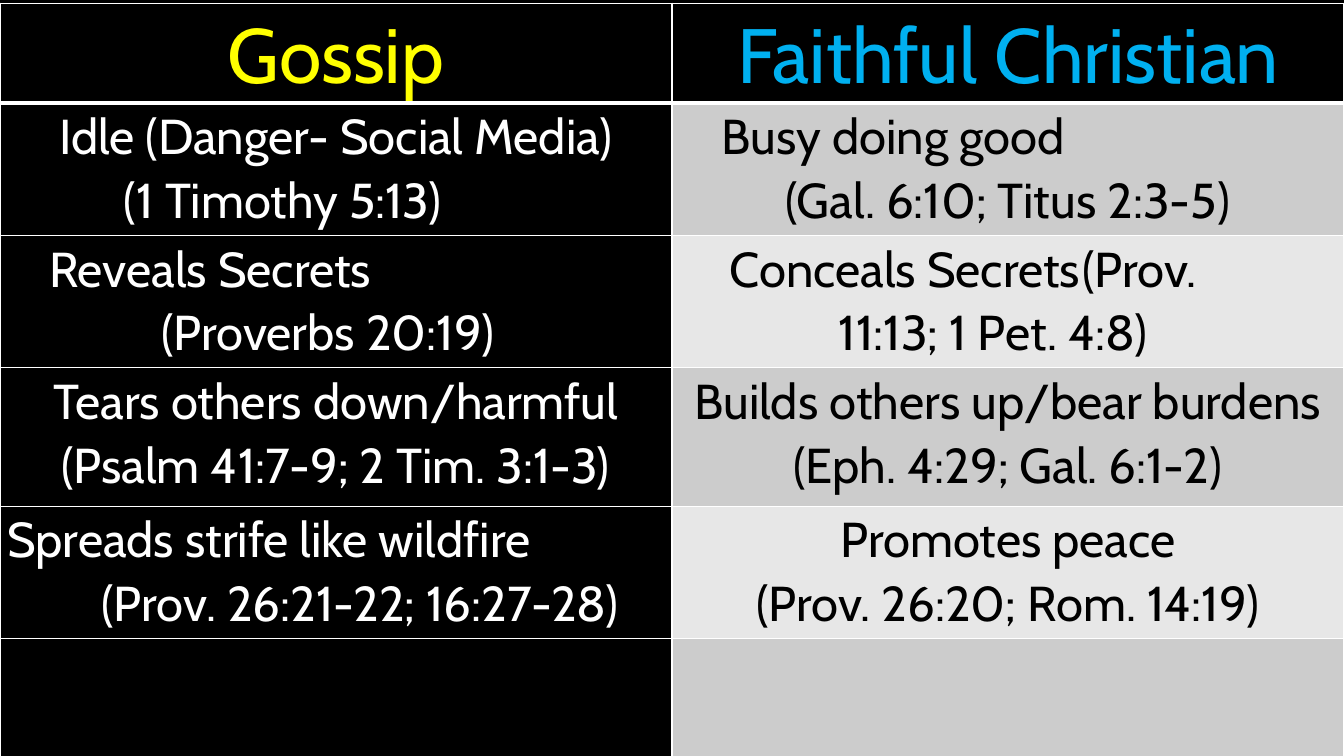
import dataclasses
import typing

import lxml.etree
import pptx
import pptx.dml.color
import pptx.enum.text
import pptx.oxml.ns
import pptx.util

EMU_PER_PX = 9525
SLIDE_WIDTH, SLIDE_HEIGHT = 1280, 720
TABLE_TOP = 3
ROW_HEIGHTS = (92, 126, 126, 132, 126, 135)
CELL_INSET = 7


@dataclasses.dataclass(frozen=True)
class Theme:
    font: str = "Cabin"
    heading_size: int = 55
    body_size: int = 35
    line_spacing: float = 1.07
    black: str = "000000"
    white: str = "FFFFFF"
    gossip: str = "FFFF00"
    faithful: str = "00B0F0"
    bands: tuple[str, str] = ("CCCCCC", "E7E7E7")
    rule: int = 1
    heading_rule: int = 3


class Line(typing.NamedTuple):
    text: str
    indent: int | None = None
    tabs: tuple[int, ...] = ()


class Entry(typing.NamedTuple):
    lines: tuple[Line, ...]
    color: str
    fill: str
    size: int
    bottom_rule: int


THEME = Theme()
HEADINGS = (("Gossip", THEME.gossip), ("Faithful Christian", THEME.faithful))
CONTRASTS = (
    (
        (Line("Idle (Danger- Social Media)"), Line("(1 Timothy 5:13)", 111)),
        (Line("Busy doing good", 40), Line("(Gal. 6:10; Titus 2:3-5)")),
    ),
    (
        (Line("Reveals Secrets", 40), Line("(Proverbs 20:19)", 147)),
        (
            Line("\tConceals Secrets\t(Prov.", 0, (26, 486)),
            Line("11:13; 1 Pet. 4:8)", 152),
        ),
    ),
    (
        (Line("Tears others down/harmful"), Line("(Psalm 41:7-9; 2 Tim. 3:1-3)")),
        (Line("Builds others up/bear burdens"), Line("(Eph. 4:29; Gal. 6:1-2)")),
    ),
    (
        (
            Line("Spreads strife like wildfire", 0),
            Line("(Prov. 26:21-22; 16:27-28)", 90),
        ),
        (Line("Promotes peace"), Line("(Prov. 26:20; Rom. 14:19)")),
    ),
    ((), ()),
)


def px(length: int) -> pptx.util.Emu:
    return pptx.util.Emu(length * EMU_PER_PX)


def rgb(color: str) -> pptx.dml.color.RGBColor:
    return pptx.dml.color.RGBColor.from_string(color)


def add_child(parent, tag: str, **attributes: str):
    return lxml.etree.SubElement(parent, pptx.oxml.ns.qn(tag), attributes)


def write_line(paragraph, line: Line, entry: Entry) -> None:
    paragraph.text = line.text
    paragraph.line_spacing = THEME.line_spacing
    paragraph.alignment = pptx.enum.text.PP_ALIGN.CENTER
    properties = paragraph._p.get_or_add_pPr()
    if line.indent is not None:
        paragraph.alignment = pptx.enum.text.PP_ALIGN.LEFT
        properties.set("marL", str(px(line.indent)))
        properties.set("indent", "0")
    if line.tabs:
        stops = add_child(properties, "a:tabLst")
        for position in line.tabs:
            add_child(stops, "a:tab", pos=str(px(position)), algn="l")
    paragraph.font.name = THEME.font
    paragraph.font.size = pptx.util.Pt(entry.size)
    paragraph.font.bold = False
    paragraph.font.color.rgb = rgb(entry.color)


def rule_cell(cell, top_rule: int, bottom_rule: int) -> None:
    properties = cell._tc.get_or_add_tcPr()
    rules = (
        ("a:lnL", THEME.rule),
        ("a:lnR", THEME.rule),
        ("a:lnT", top_rule),
        ("a:lnB", bottom_rule),
    )
    for tag, weight in rules:
        border = add_child(properties, tag, w=str(pptx.util.Pt(weight)))
        paint = add_child(border, "a:solidFill")
        add_child(paint, "a:srgbClr", val=THEME.white)


def draw_entry(cell, entry: Entry, top_rule: int) -> None:
    cell.margin_left = cell.margin_right = px(CELL_INSET)
    cell.margin_top = cell.margin_bottom = 0
    rule_cell(cell, top_rule, entry.bottom_rule)
    cell.fill.solid()
    cell.fill.fore_color.rgb = rgb(entry.fill)
    for index, line in enumerate(entry.lines):
        frame = cell.text_frame
        paragraph = frame.add_paragraph() if index else frame.paragraphs[0]
        write_line(paragraph, line, entry)


def comparison_rows() -> list[tuple[Entry, ...]]:
    rows = [
        tuple(
            Entry((Line(heading),), color, THEME.black,
                  THEME.heading_size, THEME.heading_rule)
            for heading, color in HEADINGS
        )
    ]
    for index, (gossip, faithful) in enumerate(CONTRASTS):
        band = THEME.bands[index % 2]
        rows.append((
            Entry(gossip, THEME.white, THEME.black, THEME.body_size, THEME.rule),
            Entry(faithful, THEME.black, band, THEME.body_size, THEME.rule),
        ))
    return rows


def draw_comparison(slide) -> None:
    rows = comparison_rows()
    comparison = slide.shapes.add_table(
        len(rows), len(HEADINGS), 0, px(TABLE_TOP),
        px(SLIDE_WIDTH), px(sum(ROW_HEIGHTS)),
    ).table
    comparison.first_row = False
    comparison.horz_banding = False
    top_rule = THEME.rule
    for row_index, (height, entries) in enumerate(zip(ROW_HEIGHTS, rows)):
        comparison.rows[row_index].height = px(height)
        for column_index, entry in enumerate(entries):
            draw_entry(comparison.cell(row_index, column_index), entry, top_rule)
        top_rule = entries[0].bottom_rule


def main() -> None:
    presentation = pptx.Presentation()
    presentation.slide_width = px(SLIDE_WIDTH)
    presentation.slide_height = px(SLIDE_HEIGHT)
    slide = presentation.slides.add_slide(presentation.slide_layouts[6])
    slide.background.fill.solid()
    slide.background.fill.fore_color.rgb = rgb(THEME.black)
    draw_comparison(slide)
    presentation.save("out.pptx")


if __name__ == "__main__":
    main()
